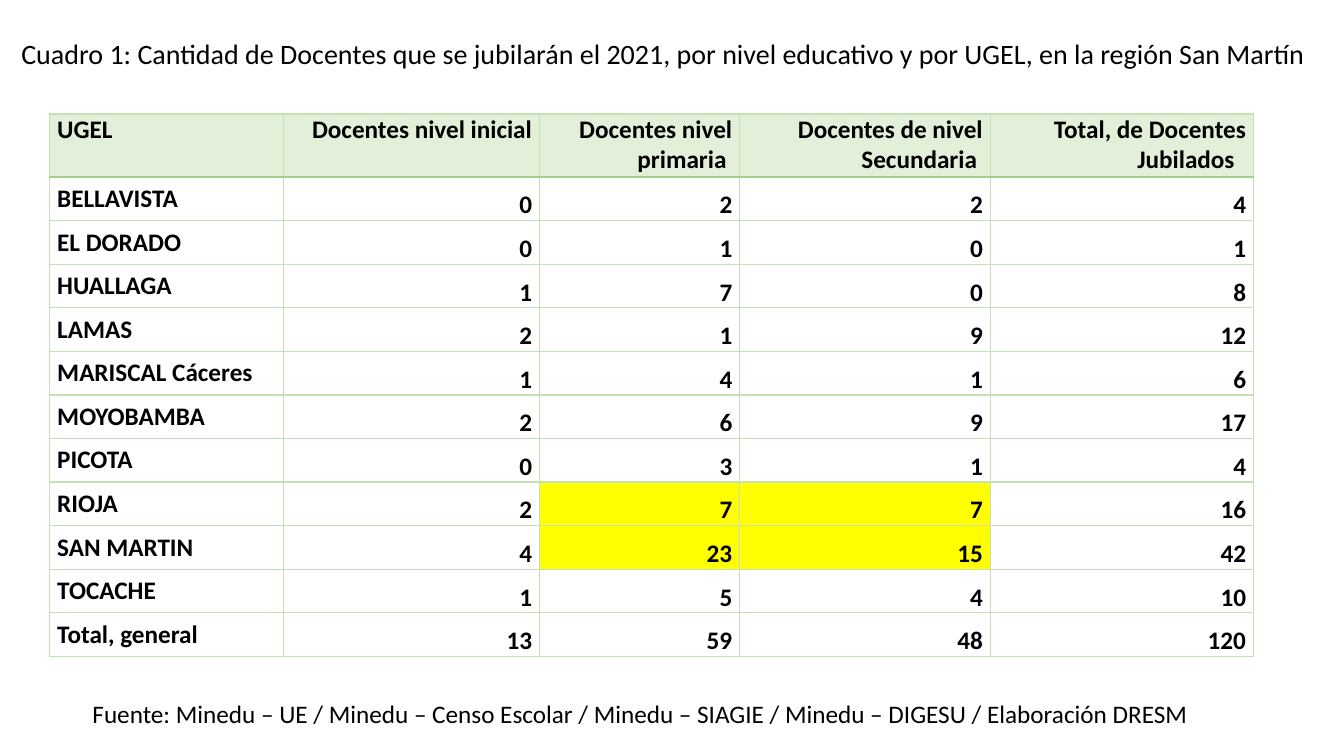
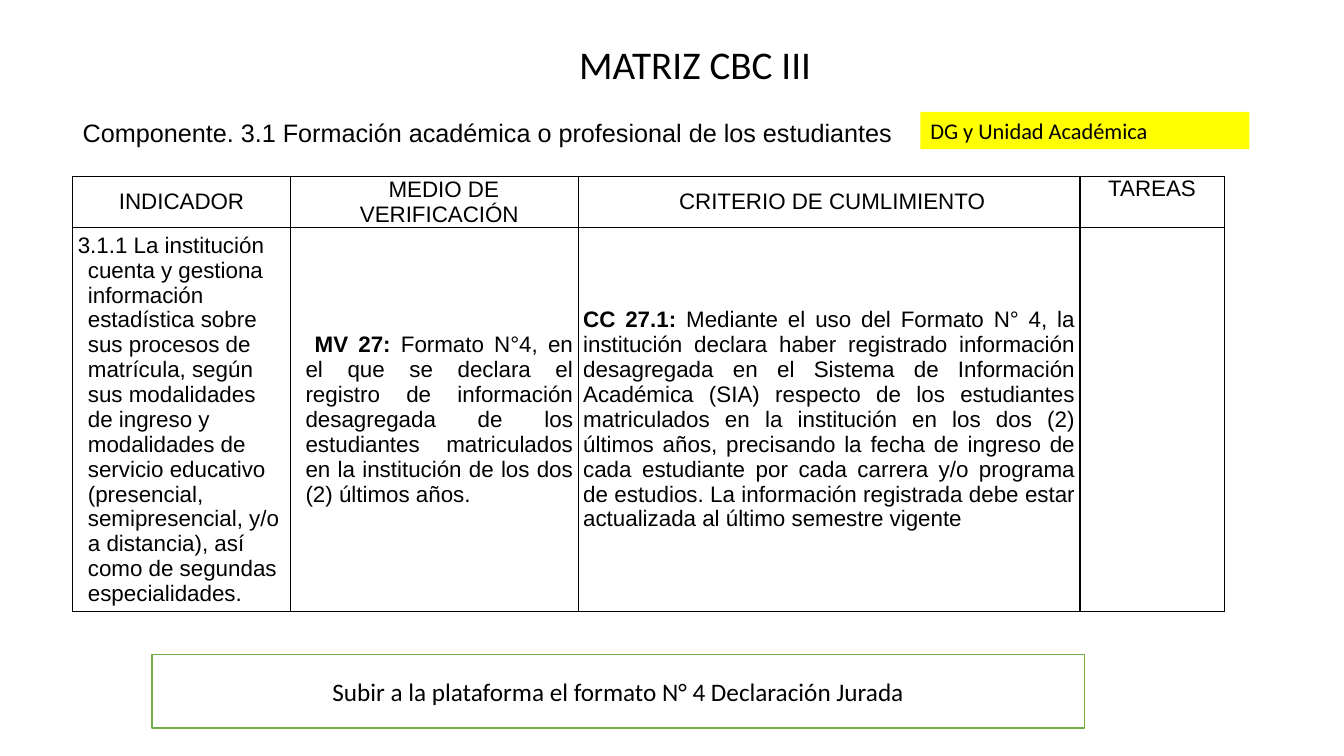
"""Build two slides about teachers retiring in 2021 and the CBC III matrix."""
from pptx import Presentation
from pptx import util as u
from pptx.dml.color import RGBColor
from pptx.enum import shapes, text
from pptx.oxml import parse_xml
from pptx.oxml.ns import nsdecls

BLACK = RGBColor(0x00, 0x00, 0x00)
WHITE = RGBColor(0xFF, 0xFF, 0xFF)
YELLOW = RGBColor(0xFF, 0xFF, 0x00)
GREEN = RGBColor(0x70, 0xAD, 0x47)
HEADER_GREEN = RGBColor(0xE2, 0xEF, 0xD9)
BORDER_GREEN = RGBColor(0xC5, 0xE0, 0xB3)
RULE_GREEN = RGBColor(0xA8, 0xD0, 0x8D)

LEFT, CENTER, RIGHT, JUSTIFY = (
    text.PP_ALIGN.LEFT, text.PP_ALIGN.CENTER, text.PP_ALIGN.RIGHT, text.PP_ALIGN.JUSTIFY)
TOP, MIDDLE, BOTTOM = text.MSO_ANCHOR.TOP, text.MSO_ANCHOR.MIDDLE, text.MSO_ANCHOR.BOTTOM

RETIREMENT_HEADERS = ["UGEL", "Docentes nivel inicial", "Docentes nivel primaria ",
                      "Docentes de nivel Secundaria ", "Total, de Docentes Jubilados  "]
RETIREMENTS = [
    ("BELLAVISTA", 0, 2, 2, 4),
    ("EL DORADO", 0, 1, 0, 1),
    ("HUALLAGA", 1, 7, 0, 8),
    ("LAMAS", 2, 1, 9, 12),
    ("MARISCAL Cáceres", 1, 4, 1, 6),
    ("MOYOBAMBA", 2, 6, 9, 17),
    ("PICOTA", 0, 3, 1, 4),
    ("RIOJA", 2, 7, 7, 16),
    ("SAN MARTIN", 4, 23, 15, 42),
    ("TOCACHE", 1, 5, 4, 10),
    ("Total, general", 13, 59, 48, 120),
]
HIGHLIGHTED_UGELS = ("RIOJA", "SAN MARTIN")
HIGHLIGHTED_COLUMNS = (2, 3)

MATRIX_HEADERS = ["INDICADOR", "MEDIO DE VERIFICACIÓN", " CRITERIO DE CUMLIMIENTO", "TAREAS"]
MATRIX_BODY = [
    ("", "3.1.1 La institución cuenta y gestiona información estadística sobre sus procesos de "
     "matrícula, según sus modalidades de ingreso y modalidades de servicio educativo "
     "(presencial, semipresencial, y/o a distancia), así como de segundas especialidades."),
    ("MV 27:", " Formato N°4, en el que se declara el registro de información desagregada de los "
     "estudiantes matriculados en la institución de los dos (2) últimos años. "),
    ("CC 27.1:", " Mediante el uso del Formato N° 4, la institución declara haber registrado "
     "información desagregada en el Sistema de Información Académica (SIA) respecto de los "
     "estudiantes matriculados en la institución en los dos (2) últimos años, precisando la "
     "fecha de ingreso de cada estudiante por cada carrera y/o programa de estudios. La "
     "información registrada debe estar actualizada al último semestre vigente"),
    ("", ""),
]
MATRIX_INDENTS = [(7.2, -7.2), (7.2, 6.5), (0, 0), (0, 0)]


def write(frame, content, size, font="Calibri", align=LEFT, bold=False, label="", spacing=1.0):
    """Fill a text frame with one paragraph, optionally led by a bold label."""
    paragraph = frame.paragraphs[0]
    paragraph.text = label or content
    if label:
        paragraph.add_run().text = content
    paragraph.alignment = align
    paragraph.line_spacing = spacing
    for index, run in enumerate(paragraph.runs):
        run.font.name = font
        run.font.size = u.Pt(size)
        run.font.bold = bold or bool(label and index == 0)
        run.font.color.rgb = BLACK
    return paragraph


def place(shape, left, top, width, height):
    """Set the position and size of a shape in points."""
    shape.left, shape.top = u.Pt(left), u.Pt(top)
    shape.width, shape.height = u.Pt(width), u.Pt(height)


def add_titled_slide(presentation, title, box, size, **style):
    """Add a title-only slide and format its title."""
    slide = presentation.slides.add_slide(presentation.slide_layouts[5])
    place(slide.shapes.title, *box)
    frame = slide.shapes.title.text_frame
    frame.auto_size = text.MSO_AUTO_SIZE.NONE
    frame.word_wrap = False
    frame.vertical_anchor = MIDDLE
    write(frame, title, size, **style)
    return slide


def add_text(slide, content, box, size, wrap=True, **style):
    """Add a plain text box."""
    frame = slide.shapes.add_textbox(*map(u.Pt, box)).text_frame
    frame.word_wrap = wrap
    write(frame, content, size, **style)


def add_box(slide, content, box, size, fill, line=None, anchor=MIDDLE, **style):
    """Add a filled rectangle holding text."""
    shape = slide.shapes.add_shape(shapes.MSO_SHAPE.RECTANGLE, *map(u.Pt, box))
    shape.shadow.inherit = False
    shape.fill.solid()
    shape.fill.fore_color.rgb = fill
    if line is None:
        shape.line.fill.background()
    else:
        shape.line.color.rgb = line
        shape.line.width = u.Pt(1)
    shape.text_frame.word_wrap = True
    shape.text_frame.vertical_anchor = anchor
    write(shape.text_frame, content, size, **style)


def add_table(slide, left, top, widths, heights):
    """Add a table without banding and with the given column widths and row heights."""
    table = slide.shapes.add_table(len(heights), len(widths), u.Pt(left), u.Pt(top),
                                   u.Pt(sum(widths)), u.Pt(sum(heights))).table
    table.first_row = table.horz_banding = False
    for column, width in zip(table.columns, widths):
        column.width = u.Pt(width)
    for row, height in zip(table.rows, heights):
        row.height = u.Pt(height)
    return table


def format_cell(cell, inset, anchor, border, fill=None, top=None, bottom=None):
    """Set margins, borders and fill; a border is a colour and a width."""
    cell.margin_left = cell.margin_right = u.Pt(inset)
    cell.margin_top = cell.margin_bottom = 0
    cell.vertical_anchor = anchor
    properties = cell._tc.get_or_add_tcPr()
    edges = {"lnL": border, "lnR": border, "lnT": top or border, "lnB": bottom or border}
    for tag, (color, width) in edges.items():
        properties.append(parse_xml(
            f'<a:{tag} {nsdecls("a")} w="{u.Pt(width)}"><a:solidFill>'
            f'<a:srgbClr val="{color}"/></a:solidFill></a:{tag}>'))
    if fill is None:
        cell.fill.background()
    else:
        cell.fill.solid()
        cell.fill.fore_color.rgb = fill


def add_retirement_table(slide):
    """Add the table of retiring teachers by UGEL and level."""
    table = add_table(slide, 35.5, 81.5, [167, 183, 143, 179, 188],
                      [45] + [31.15] * len(RETIREMENTS))
    border, rule = (BORDER_GREEN, 1), (RULE_GREEN, 1.5)
    for row, values in enumerate([RETIREMENT_HEADERS, *RETIREMENTS]):
        for column, value in enumerate(values):
            cell = table.cell(row, column)
            fill = None
            if row == 0:
                anchor, fill = TOP, HEADER_GREEN
            else:
                anchor = BOTTOM if column else MIDDLE
                if values[0] in HIGHLIGHTED_UGELS and column in HIGHLIGHTED_COLUMNS:
                    fill = YELLOW
            format_cell(cell, 5.4, anchor, border, fill, top=rule if row == 1 else None,
                        bottom=rule if row == 0 else None)
            write(cell.text_frame, str(value), 18, bold=True, align=RIGHT if column else LEFT)


def add_matrix_table(slide):
    """Add the table of indicator, means of verification and criterion."""
    table = add_table(slide, 52, 126, [155.5, 205.5, 358.5, 103], [36.6, 274.4])
    headers = [("", header) for header in MATRIX_HEADERS]
    for row, entries in enumerate([headers, MATRIX_BODY]):
        for column, (label, content) in enumerate(entries):
            cell = table.cell(row, column)
            anchor = TOP if content == "TAREAS" else MIDDLE
            format_cell(cell, 3.6, anchor, (BLACK, 1))
            if row == 0:
                align = CENTER
            else:
                align = JUSTIFY if label else LEFT
            paragraph = write(cell.text_frame, content, 16, "Arial", align, label=label)
            margin, indent = MATRIX_INDENTS[column]
            properties = paragraph._p.get_or_add_pPr()
            properties.set("marL", str(u.Pt(margin)))
            properties.set("indent", str(u.Pt(indent)))


def main():
    """Build and save the presentation."""
    presentation = Presentation()
    presentation.slide_width, presentation.slide_height = u.Pt(960), u.Pt(540)

    slide = add_titled_slide(
        presentation, "Cuadro 1: Cantidad de Docentes que se jubilarán el 2021, por nivel "
        "educativo y por UGEL, en la región San Martín", (8, 22, 937, 32), 20)
    add_retirement_table(slide)
    add_text(slide, "Fuente: Minedu – UE / Minedu – Censo Escolar / Minedu – SIAGIE / "
             "Minedu – DIGESU / Elaboración DRESM", (59, 495, 800, 29), 18)

    slide = add_titled_slide(presentation, "MATRIZ CBC III", (66, 29, 861, 38), 28,
                             align=CENTER, spacing=0.9)
    add_matrix_table(slide)
    add_box(slide, "Subir a la plataforma el formato N° 4 Declaración Jurada",
            (108.5, 467.5, 666, 52.5), 18, WHITE, GREEN, align=CENTER)
    add_text(slide, "Componente. 3.1 Formación académica o profesional de los estudiantes",
             (52, 80, 593, 29), 18, wrap=False, font="Arial")
    add_box(slide, "DG y Unidad Académica", (657.5, 80, 235, 26.5), 16, YELLOW, anchor=TOP)

    presentation.save("out.pptx")


if __name__ == "__main__":
    main()
